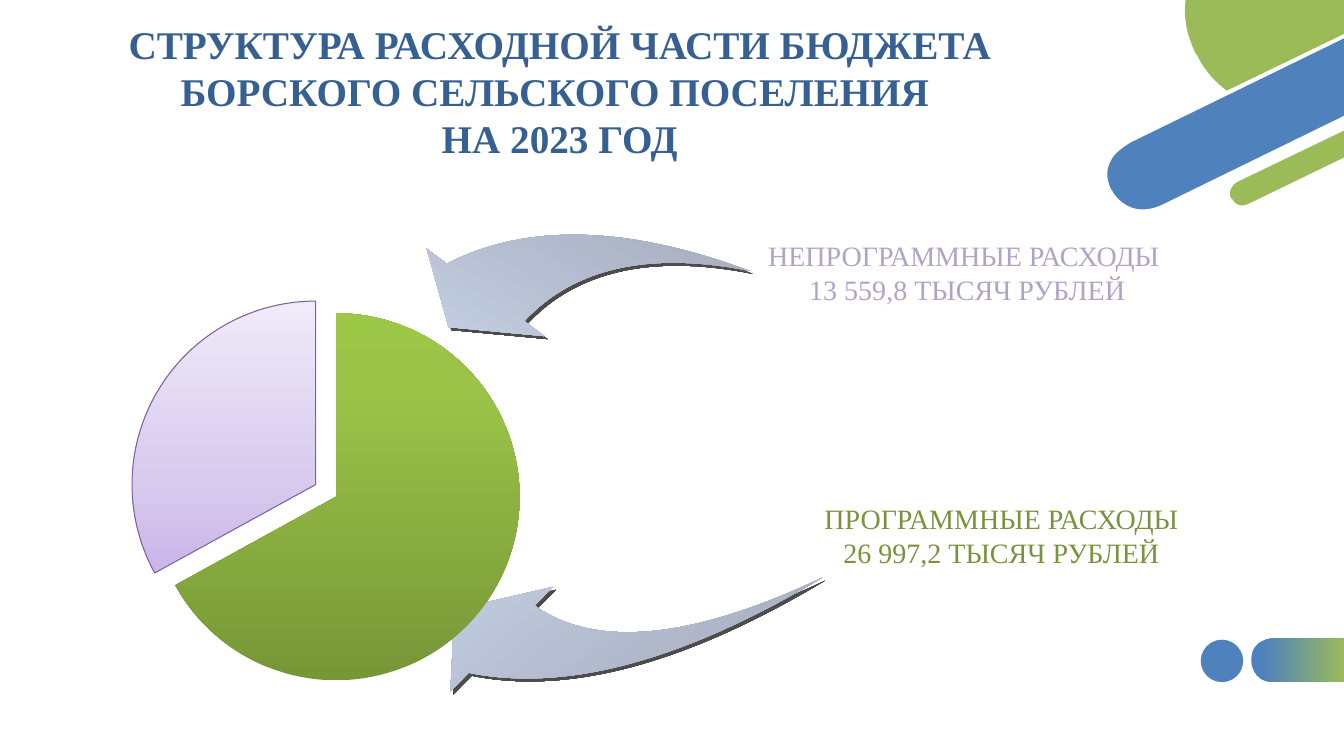
"""Build a slide on the spending side of a village budget."""
import pptx
import pptx.chart.data
import pptx.dml.color
import pptx.enum.chart
import pptx.enum.shapes
import pptx.enum.text
import pptx.oxml
import pptx.oxml.ns
import pptx.util

Cm = pptx.util.Cm
Pt = pptx.util.Pt
RGBColor = pptx.dml.color.RGBColor
Kind = pptx.enum.shapes.MSO_SHAPE
qn = pptx.oxml.ns.qn

WHITE = RGBColor(0xFF, 0xFF, 0xFF)
BLACK = RGBColor(0x00, 0x00, 0x00)
BLUE = RGBColor(0x4F, 0x81, 0xBD)
GREEN = RGBColor(0x9B, 0xBB, 0x59)
NAVY = RGBColor(0x37, 0x60, 0x92)
LILAC = RGBColor(0xB3, 0xA2, 0xC7)
OLIVE = RGBColor(0x77, 0x93, 0x3C)
PLUM = RGBColor(0x7D, 0x60, 0xA0)
STEEL = [(0, RGBColor(0x99, 0xA0, 0xAF)), (80, RGBColor(0xC6, 0xD0, 0xE4)),
         (100, RGBColor(0xC7, 0xD1, 0xE5))]
LEAF = [(0, RGBColor(0x77, 0x97, 0x37)), (80, RGBColor(0x9B, 0xC3, 0x48)),
        (100, RGBColor(0x9D, 0xC7, 0x46))]
MAUVE = [(0, RGBColor(0xC9, 0xB5, 0xE8)), (35, RGBColor(0xD8, 0xCB, 0xEE)),
         (100, RGBColor(0xF0, 0xEA, 0xF9))]
BLEND = [(12, BLUE), (100, GREEN)]

UNIT = Cm(0.0254)

PILL = [(22, 43), (94, 43), (94, 0), (22, 0), (22, 0, 1, 0, 1, 21), (1, 22),
        (1, 22, 1, 43, 22, 43)]
BANDS = [
    (WHITE, [(233, 81), (206, 94), (174, 110, 144, 108, 119, 89),
             (99, 74, 89, 55, 89, 55), (88, 52), (79, 34, 75, 16, 78, 0),
             (74, 0), (71, 17, 75, 35, 84, 54), (86, 57),
             (86, 58, 96, 77, 116, 92), (128, 101, 144, 109, 165, 109),
             (177, 109, 191, 106, 208, 98), (233, 86)]),
    (BLUE, [(21, 139), (21, 139, -15, 157, 1, 189), (1, 190),
            (1, 190, 17, 222, 54, 204), (233, 117), (233, 36)]),
    (GREEN, [(88, 56), (88, 56, 97, 76, 117, 90), (233, 34), (234, 0),
             (76, 0), (74, 15, 76, 33, 86, 53)]),
    (GREEN, [(234, 126), (127, 178), (127, 178, 113, 185, 120, 197),
             (120, 198), (120, 198, 126, 211, 140, 204), (234, 158)]),
    (WHITE, [(139, 202), (127, 208, 122, 198, 122, 197), (121, 197),
             (116, 186, 128, 180, 128, 180), (234, 129), (234, 124),
             (126, 176), (126, 176, 119, 180, 117, 187),
             (115, 191, 116, 195, 118, 199), (120, 203, 125, 208, 132, 208),
             (135, 208, 138, 208, 141, 206), (234, 161), (234, 156)]),
    (WHITE, [(53, 203), (19, 219, 3, 190, 3, 189), (2, 188),
             (-4, 175, -3, 164, 6, 153), (13, 146, 22, 141, 22, 141),
             (233, 38), (233, 34), (20, 137), (19, 138, 2, 146, -4, 163),
             (-7, 171, -6, 180, -1, 190), (-1, 191),
             (-1, 191, 10, 212, 33, 212), (39, 212, 46, 210, 54, 206),
             (233, 119), (233, 115)]),
]


def fade(fill, props, stops, angle):
    """Give a fill a linear gradient."""
    fill.solid()
    marks = "".join(f'<a:gs pos="{pos * 1000}"><a:srgbClr val="{tone}"/></a:gs>'
                    for pos, tone in stops)
    grad = (f'<a:gradFill {pptx.oxml.ns.nsdecls("a")} rotWithShape="1"><a:gsLst>{marks}'
            f'</a:gsLst><a:lin ang="{angle * 60000}" scaled="0"/></a:gradFill>')
    props.replace(props.find(qn("a:solidFill")), pptx.oxml.parse_xml(grad))


def paint(shape, tone):
    """Fill a shape with a colour or gradient, without line or shadow."""
    shape.shadow.inherit = False
    shape.line.fill.background()
    if isinstance(tone, list):
        fade(shape.fill, shape._element.spPr, tone, 0)
    else:
        shape.fill.solid()
        shape.fill.fore_color.rgb = tone


def trace(slide, left, top, parts, tone):
    """Draw an outline of lines and curves from a corner."""
    dots = [(part[i] * UNIT, part[i + 1] * UNIT)
            for part in parts for i in range(0, len(part), 2)]
    pen = slide.shapes.build_freeform(*dots[0])
    pen.add_line_segments(dots[1:], close=True)
    shape = pen.convert_to_shape(left, top)
    lines = iter(list(shape._element.iter(qn("a:lnTo"))))
    for part in parts[1:]:
        first = next(lines)
        if len(part) == 6:
            first.tag = qn("a:cubicBezTo")
            for _ in range(2):
                spare = next(lines)
                first.append(spare[0])
                spare.getparent().remove(spare)
    paint(shape, tone)


def corner(slide, left, top):
    """Draw the slanted bands of the top corner."""
    for tone, parts in BANDS:
        trace(slide, left, top, parts, tone)


def footer(slide, left, top, size):
    """Draw the dot and the pill of the bottom corner."""
    dot = slide.shapes.add_shape(Kind.OVAL, left, top, size, size)
    paint(dot, BLUE)
    trace(slide, left + Cm(1.25), top - Cm(0.03), PILL, BLEND)


def arrow(slide, left, top, width, height, turn, bends, flips):
    """Draw a swoosh arrow with its shadow."""
    shape = slide.shapes.add_shape(Kind.SWOOSH_ARROW, left, top, width, height)
    shape.adjustments[0], shape.adjustments[1] = bends
    shape.rotation = turn
    paint(shape, STEEL)
    props = shape._element.spPr
    for flip in flips:
        props.find(qn("a:xfrm")).set(flip, "1")
    shade = (f'<a:outerShdw {pptx.oxml.ns.nsdecls("a")} blurRad="0" dist="{Pt(3)}" '
             f'dir="2700000" rotWithShape="0"><a:srgbClr val="{BLACK}">'
             '<a:alpha val="70000"/></a:srgbClr></a:outerShdw>')
    props.find(qn("a:effectLst")).append(pptx.oxml.parse_xml(shade))


def pie(slide, left, top, width, height):
    """Place the pie of the two kinds of spending."""
    data = pptx.chart.data.CategoryChartData()
    data.categories = ["1", "2"]
    data.add_series("Series 1", (67, 33))
    chart = slide.shapes.add_chart(pptx.enum.chart.XL_CHART_TYPE.PIE,
                                   left, top, width, height, data).chart
    chart.has_legend = chart.has_title = False
    chart.font.name, chart.font.size = "Arial", Pt(18)
    chart.font.color.rgb = BLACK
    plot = chart.plots[0]
    plot.vary_by_categories = True
    for index, stops in enumerate((LEAF, MAUVE)):
        form = plot.series[0].points[index].format
        props = form._element.get_or_add_spPr()
        fade(form.fill, props, stops, 270)
        form.line.fill.background()
    form.line.color.rgb = PLUM
    form.line.width = Pt(0.75)
    space = pptx.oxml.ns.nsdecls("c")
    props.addprevious(pptx.oxml.parse_xml(f'<c:explosion {space} val="13"/>'))
    area = chart._chartSpace.chart.plotArea
    for old in area.findall(qn("c:layout")):
        area.remove(old)
    sides = "".join(f'<c:{key} val="{val}"/>' for key, val in (
        ("layoutTarget", "inner"), ("xMode", "edge"), ("yMode", "edge"),
        ("x", 0.22), ("y", 0.09), ("w", 0.56), ("h", 0.82)))
    area.insert(0, pptx.oxml.parse_xml(
        f'<c:layout {space}><c:manualLayout>{sides}</c:manualLayout></c:layout>'))


def label(slide, left, top, width, height, lines, size, tone, bold=False):
    """Write centred lines in a text box."""
    frame = slide.shapes.add_textbox(left, top, width, height).text_frame
    frame.word_wrap = True
    frame.auto_size = pptx.enum.text.MSO_AUTO_SIZE.SHAPE_TO_FIT_TEXT
    for index, line in enumerate(lines):
        para = frame.add_paragraph() if index else frame.paragraphs[0]
        para.alignment = pptx.enum.text.PP_ALIGN.CENTER
        para.line_spacing = Pt(size * 1.2)
        run = para.add_run()
        run.text = line
        run.font.name, run.font.size = "Times New Roman", Pt(size)
        run.font.bold = bold
        run.font.color.rgb = tone


def main():
    """Build and save the deck."""
    deck = pptx.Presentation()
    deck.slide_width, deck.slide_height = Cm(33.87), Cm(19.05)
    slide = deck.slides.add_slide(deck.slide_layouts[6])
    footer(slide, Cm(30.26), Cm(16.12), Cm(1.07))
    corner(slide, Cm(27.95), Cm(0))
    label(slide, Cm(0.86), Cm(0.38), Cm(26.49), Cm(3.84),
          ["СТРУКТУРА РАСХОДНОЙ ЧАСТИ БЮДЖЕТА", "БОРСКОГО СЕЛЬСКОГО ПОСЕЛЕНИЯ ",
           "НА 2023 ГОД"], 28, NAVY, True)
    arrow(slide, Cm(12.94), Cm(10.86), Cm(5.22), Cm(9.07), 50.9, (0.26, 0.28),
          ["flipH", "flipV"])
    pie(slide, Cm(0), Cm(6.88), Cm(16.94), Cm(11.28))
    arrow(slide, Cm(11.94), Cm(3.51), Cm(5.04), Cm(7.31), 300.2, (0.33, 0.27),
          ["flipH"])
    label(slide, Cm(18.34), Cm(5.89), Cm(12.07), Cm(1.96),
          ["НЕПРОГРАММНЫЕ РАСХОДЫ ", "13 559,8 ТЫСЯЧ РУБЛЕЙ"], 20, LILAC)
    label(slide, Cm(20.5), Cm(12.52), Cm(9.47), Cm(1.96),
          ["ПРОГРАММНЫЕ РАСХОДЫ", "26 997,2 ТЫСЯЧ РУБЛЕЙ"], 20, OLIVE)
    deck.save("out.pptx")


if __name__ == "__main__":
    main()
